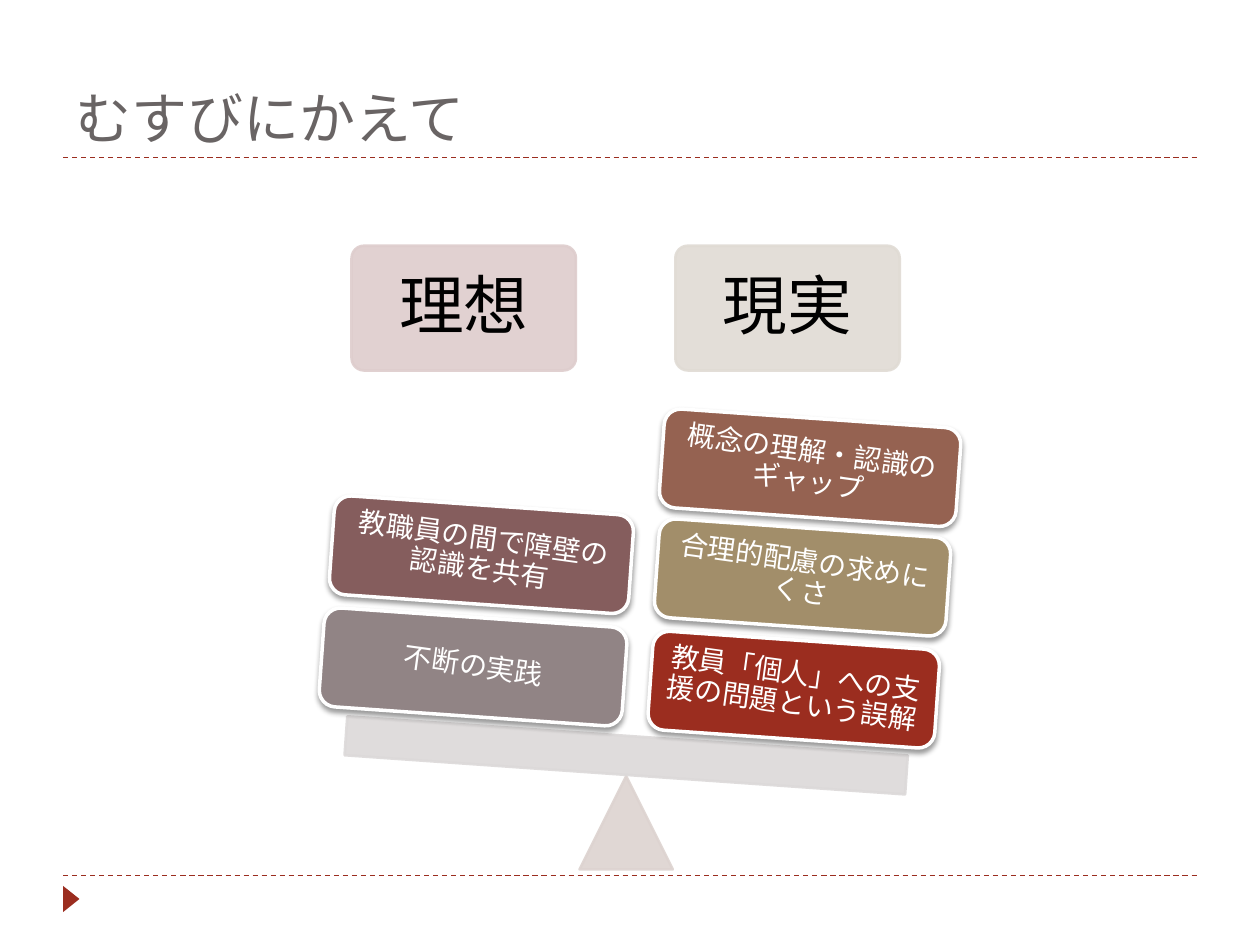
"""Build a slide that weighs ideals against reality on a tilted balance."""
import lxml.etree
import pptx
import pptx.dml.color
import pptx.enum.dml
import pptx.enum.shapes
import pptx.enum.text
import pptx.oxml.ns
import pptx.util

Pt = pptx.util.Pt
qn = pptx.oxml.ns.qn
SHAPE = pptx.enum.shapes.MSO_SHAPE
ALIGN = pptx.enum.text.PP_ALIGN
ANCHOR = pptx.enum.text.MSO_ANCHOR
TILT = 4


def paint(color_format, value, alpha=None):
    color_format.rgb = pptx.dml.color.RGBColor.from_string(value)
    if alpha:
        for node in color_format._xFill.iter(qn("a:srgbClr")):
            lxml.etree.SubElement(node, qn("a:alpha"), val=str(alpha * 1000))


def add_box(kind, frame, fill, line, width, alpha=None, text="", size=16, ink="FFFFFF", inset=5):
    box = slide.shapes.add_shape(kind, *[Pt(length) for length in frame])
    box.shadow.inherit = False
    box.fill.solid()
    paint(box.fill.fore_color, fill)
    box.line.fill.solid()
    paint(box.line.fill.fore_color, line)
    box.line.width = Pt(width)
    if alpha:
        for node in box._element.spPr.iter(qn("a:srgbClr")):
            lxml.etree.SubElement(node, qn("a:alpha"), val=str(alpha * 1000))
    if text:
        text_frame = box.text_frame
        text_frame.text = text
        text_frame.word_wrap = True
        text_frame.vertical_anchor = ANCHOR.MIDDLE
        text_frame.margin_left = text_frame.margin_right = Pt(inset)
        text_frame.margin_top = text_frame.margin_bottom = Pt(inset)
        para = text_frame.paragraphs[0]
        para.alignment = ALIGN.CENTER
        para.line_spacing = 0.9
        font = para.runs[0].font
        font.name, font.size = "Calibri", Pt(size)
        paint(font.color, ink)
    return box


deck = pptx.Presentation()
deck.slide_width, deck.slide_height = Pt(720), Pt(540)
slide = deck.slides.add_slide(deck.slide_layouts[5])

for top in (500.4, 90):
    rule = slide.shapes.add_connector(
        pptx.enum.shapes.MSO_CONNECTOR.STRAIGHT, Pt(36), Pt(top), Pt(684), Pt(top))
    paint(rule.line.color, "9B2D1F")
    rule.line.width = Pt(0.75)
    rule.line.dash_style = pptx.enum.dml.MSO_LINE.DASH
    lxml.etree.SubElement(rule._element.spPr, qn("a:effectLst"))

marker = add_box(SHAPE.ISOSCELES_TRIANGLE, (33.2, 509, 15, 9.4), "9B2D1F", "9B2D1F", 0.75)
marker.line.fill.background()
marker.rotation = 90

title = slide.shapes.title
title.left, title.top, title.width, title.height = Pt(36), Pt(12.2), Pt(648), Pt(77.8)
title.text_frame.text = "むすびにかえて"
title.text_frame.vertical_anchor = ANCHOR.BOTTOM
title_para = title.text_frame.paragraphs[0]
title_para.alignment = ALIGN.LEFT
title_font = title_para.runs[0].font
title_font.name, title_font.size = "Roboto Slab", Pt(32)
paint(title_font.color, "696464")

for left, color, text in ((200.9, "DECDCD", "理想"), (385.9, "E0DBD4", "現実")):
    label = add_box(SHAPE.ROUNDED_RECTANGLE, (left, 140.4, 128.2, 71.3), color, color, 1.5, 90,
                    text, 37, "000000", 10.8)
    label.adjustments[0] = 0.1

add_box(SHAPE.ISOSCELES_TRIANGLE, (331.2, 443.5, 53.3, 53.3), "DDD3D0", "DDD3D0", 1.5, 90)
beam = add_box(SHAPE.RECTANGLE, (197.3, 420.5, 321.1, 22.3), "DCD9D9", "DCD9D9", 1.5, 90)
beam.rotation = TILT

weights = [
    (371.5, 365.8, 164.2, "9B2D1F", "教員「個人」への支援の問題という誤解"),
    (375.1, 301.7, 167, "A28E6A", "合理的配慮の求めにくさ"),
    (378, 239, 169.9, "956251", "概念の理解・認識のギャップ"),
    (183.6, 352.8, 173.5, "918485", "不断の実践"),
    (189.4, 288.7, 171.4, "855D5D", "教職員の間で障壁の認識を共有"),
]
for left, top, width, color, text in weights:
    weight = add_box(SHAPE.ROUNDED_RECTANGLE, (left, top, width, 56.6), color, "FFFFFF", 2,
                     text=text)
    weight.rotation = TILT
    weight.text_frame._txBody.bodyPr.set("rot", str(TILT * 60000))
    effects = weight._element.spPr.find(qn("a:effectLst"))
    shadow = lxml.etree.SubElement(effects, qn("a:outerShdw"), blurRad=str(Pt(3)),
                                   dist=str(Pt(2)), dir="5400000", rotWithShape="0")
    shade = lxml.etree.SubElement(shadow, qn("a:srgbClr"), val="000000")
    lxml.etree.SubElement(shade, qn("a:alpha"), val="40000")

deck.save("out.pptx")
